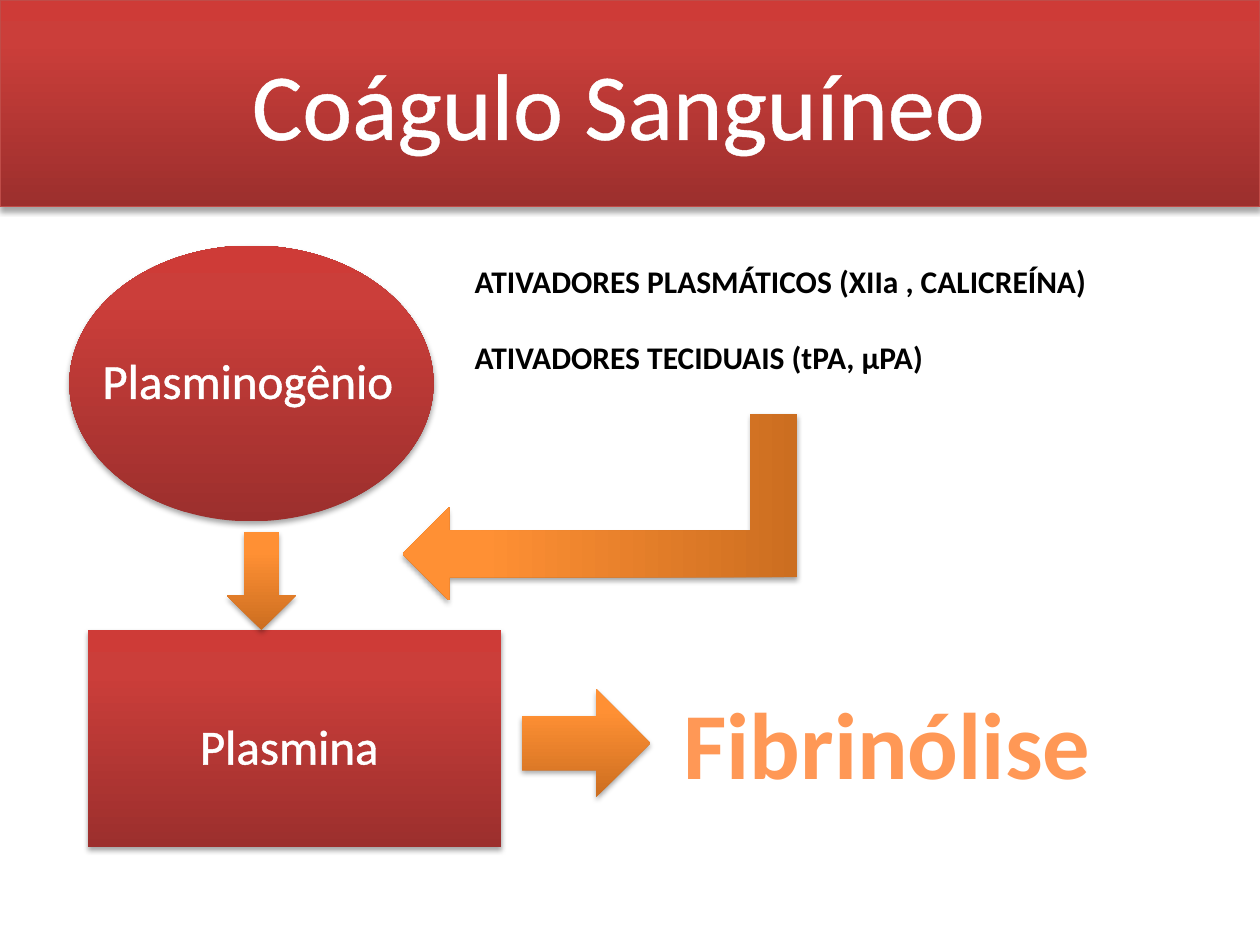
import copy
from dataclasses import dataclass, field

import pptx
import pptx.dml.color
import pptx.dml.fill
import pptx.enum.shapes
import pptx.enum.text
import pptx.oxml
import pptx.oxml.ns
import pptx.util
from pptx.dml.color import RGBColor
from pptx.enum.shapes import MSO_SHAPE
from pptx.util import Cm

WHITE = RGBColor(0xFF, 0xFF, 0xFF)
BLACK = RGBColor(0x00, 0x00, 0x00)
BORDER_RED = RGBColor(0xBF, 0x4C, 0x48)
RED = [(0, RGBColor(0x9C, 0x2F, 0x2D)), (0.8, RGBColor(0xCB, 0x3E, 0x3A)), (1, RGBColor(0xCE, 0x3B, 0x37))]
ORANGE = [(0, RGBColor(0xCC, 0x6E, 0x20)), (0.8, RGBColor(0xFF, 0x90, 0x34)), (1, RGBColor(0xFF, 0x91, 0x36))]
LETTERING = [(0, RGBColor(0x9D, 0x47, 0x00)), (0.78, RGBColor(0xFF, 0x98, 0x56)), (1, RGBColor(0xFF, 0xF5, 0xF1))]

NAMESPACE = pptx.oxml.ns.nsdecls("a")
SHADOW = (
    f'<a:outerShdw {NAMESPACE} blurRad="40000" dist="23000" dir="5400000" rotWithShape="0">'
    '<a:srgbClr val="000000"><a:alpha val="35000"/></a:srgbClr></a:outerShdw>'
)
OUTLINE = f'<a:ln {NAMESPACE} w="18415"><a:solidFill><a:srgbClr val="FFFFFF"/></a:solidFill></a:ln>'


@dataclass
class Block:
    kind: MSO_SHAPE
    box: tuple[float, float, float, float]
    stops: list
    border: RGBColor | None = None
    rotation: float = 0
    flipped: bool = False


@dataclass
class Label:
    lines: list[str]
    box: tuple[float, float, float, float]
    size: int
    color: RGBColor | None = WHITE
    stops: list = field(default_factory=list)
    bold: bool = False
    outlined: bool = False
    centered: bool = True
    wrap: bool = False
    is_title: bool = False


BLOCKS = [
    Block(MSO_SHAPE.RECTANGLE, (0, 0, 25.4, 4.17), RED, border=BORDER_RED),
    Block(MSO_SHAPE.FLOWCHART_CONNECTOR, (1.4, 4.95, 7.34, 5.56), RED),
    Block(MSO_SHAPE.RECTANGLE, (1.78, 12.7, 8.33, 4.37), RED),
    Block(MSO_SHAPE.RIGHT_ARROW, (10.52, 13.89, 2.59, 2.18), ORANGE),
    Block(MSO_SHAPE.DOWN_ARROW, (4.57, 10.72, 1.4, 1.98), ORANGE),
    Block(MSO_SHAPE.BENT_UP_ARROW, (10.21, 6.25, 3.76, 7.95), ORANGE, rotation=270, flipped=True),
]
LABELS = [
    Label(["Coágulo Sanguíneo"], (4.75, 0.79, 15.44, 2.57), 54, outlined=True, is_title=True),
    Label(["Plasminogênio"], (1.78, 6.93, 6.43, 1.45), 28, outlined=True),
    Label(["Plasmina"], (3.76, 14.3, 4.14, 1.45), 28, outlined=True),
    Label(["Fibrinólise"], (13.49, 13.69, 8.79, 2.57), 54, color=None, stops=LETTERING, bold=True),
    Label(
        ["ATIVADORES PLASMÁTICOS (XIIa , CALICREÍNA)", "ATIVADORES TECIDUAIS (tPA, µPA)"],
        (9.32, 5.16, 13.69, 2.57), 18, color=BLACK, bold=True, centered=False, wrap=True,
    ),
]


def apply_format(target: object, values: dict) -> None:
    for name, value in values.items():
        setattr(target, name, value)


def apply_gradient(fill: pptx.dml.fill.FillFormat, element: object, stops: list, angle: float) -> None:
    fill.gradient()
    fill.gradient_angle = angle
    stop_list = element.find(".//" + pptx.oxml.ns.qn("a:gsLst"))
    stop_list.insert(1, copy.deepcopy(stop_list[0]))
    for stop, (position, color) in zip(fill.gradient_stops, stops):
        stop.position = position
        stop.color.rgb = color


def draw_block(slide: object, block: Block) -> None:
    shape = slide.shapes.add_shape(block.kind, *map(Cm, block.box))
    properties = shape._element.spPr
    apply_gradient(shape.fill, properties, block.stops, 90)
    if block.border is None:
        shape.line.fill.background()
    else:
        shape.line.color.rgb = block.border
        shape.line.width = pptx.util.Pt(0.75)
    shape.shadow.inherit = False
    effects = properties.find(pptx.oxml.ns.qn("a:effectLst"))
    effects.append(pptx.oxml.parse_xml(SHADOW))
    shape.rotation = block.rotation
    if block.flipped:
        properties.xfrm.set("flipH", "1")


def draw_label(slide: object, label: Label) -> None:
    left, top, width, height = map(Cm, label.box)
    if label.is_title:
        shape = slide.shapes.title
        slide.shapes._spTree.append(shape._element)
        apply_format(shape, {"left": left, "top": top, "width": width, "height": height})
    else:
        shape = slide.shapes.add_textbox(left, top, width, height)
    frame = shape.text_frame
    frame.text = "\n".join(label.lines)
    apply_format(frame, {
        "word_wrap": label.wrap,
        "auto_size": pptx.enum.text.MSO_AUTO_SIZE.SHAPE_TO_FIT_TEXT,
        "vertical_anchor": pptx.enum.text.MSO_ANCHOR.TOP,
    })
    alignment = pptx.enum.text.PP_ALIGN.CENTER if label.centered else pptx.enum.text.PP_ALIGN.LEFT
    for index, paragraph in enumerate(frame.paragraphs):
        paragraph.alignment = alignment
        paragraph.space_before = pptx.util.Pt(22 if index else 0)
        run = paragraph.runs[0]
        apply_format(run.font, {"name": "Calibri", "size": pptx.util.Pt(label.size), "bold": label.bold})
        if label.stops:
            apply_gradient(run.font.fill, run._r, label.stops, 270)
        else:
            run.font.color.rgb = label.color
        if label.outlined:
            run._r.get_or_add_rPr().insert(0, pptx.oxml.parse_xml(OUTLINE))


def main() -> None:
    presentation = pptx.Presentation()
    apply_format(presentation, {"slide_width": Cm(25.4), "slide_height": Cm(19.05)})
    slide = presentation.slides.add_slide(presentation.slide_layouts[5])
    for block in BLOCKS:
        draw_block(slide, block)
    for label in LABELS:
        draw_label(slide, label)
    presentation.save("out.pptx")


if __name__ == "__main__":
    main()
